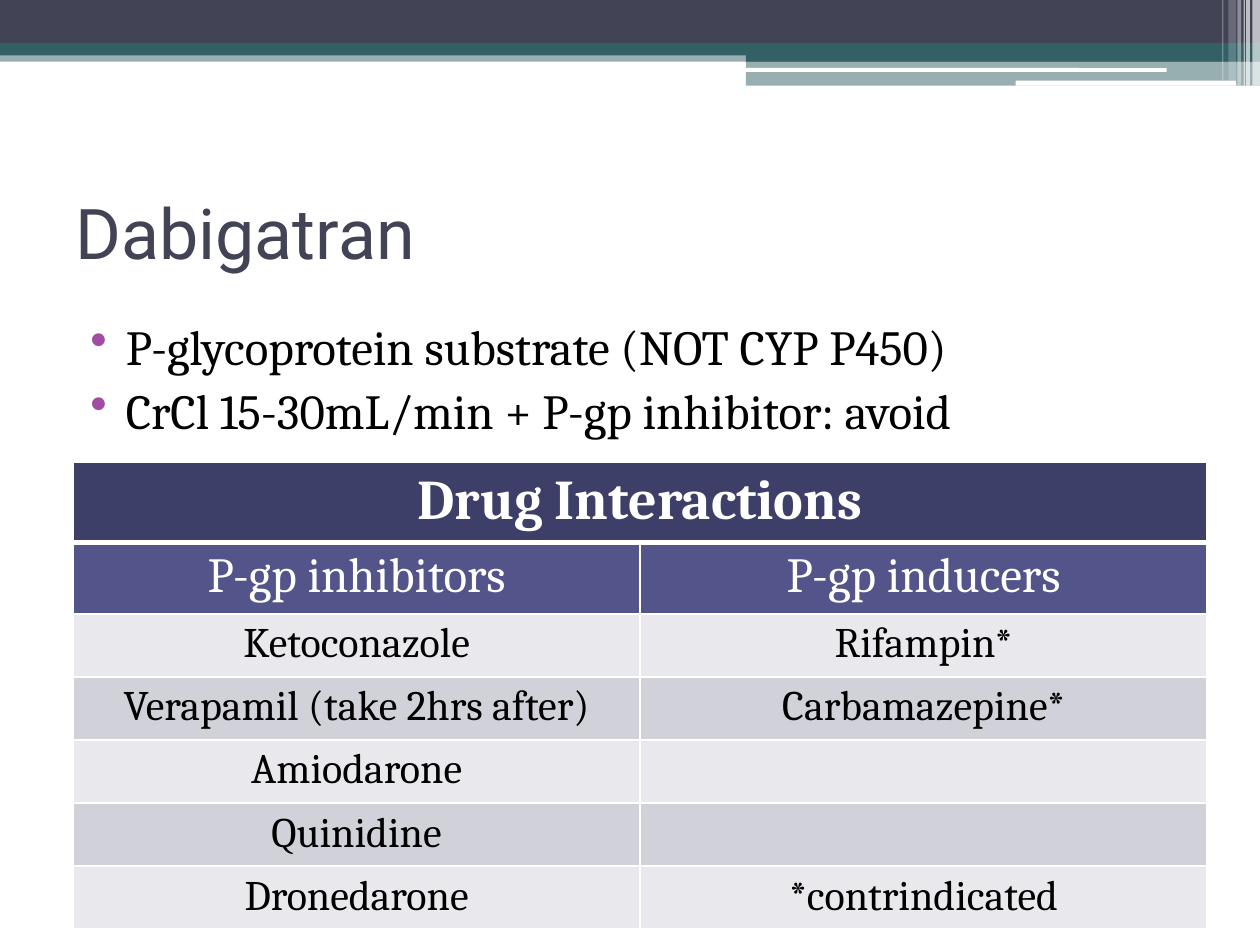
from lxml import etree
from pptx import Presentation
from pptx.dml.color import RGBColor
from pptx.enum import shapes, text
from pptx.oxml.ns import qn
from pptx.util import Inches, Pt

WHITE = RGBColor(0xFF, 0xFF, 0xFF)
BLACK = RGBColor(0, 0, 0)
SLATE = RGBColor(0x42, 0x44, 0x56)
TEAL = RGBColor(0x32, 0x60, 0x64)
PURPLE = RGBColor(0xA0, 0x4D, 0xA3)
NAVY = RGBColor(0x3E, 0x3F, 0x68)
INDIGO = RGBColor(0x53, 0x54, 0x8A)
LIGHT = RGBColor(0xE9, 0xE9, 0xED)
GREY = RGBColor(0xD1, 0xD1, 0xDA)

BANDS = [
    (0, 0.4, 10, 0.09, TEAL, 50),
    (0, 0, 10, 0.34, SLATE, 100),
    (0, 0.34, 10, 0.1, TEAL, 100),
    (5.92, 0.39, 4.08, 0.1, TEAL, 100),
    (5.92, 0.48, 4.08, 0.2, TEAL, 50),
]
HIGHLIGHTS = [(5.91, 0.54, 3.35, 0.03), (8.06, 0.64, 1.75, 0.04)]
STRIPES = [
    (9.94, 0.06, 0.68, 65),
    (9.89, 0.03, 0.68, 65),
    (9.87, 0.01, 0.68, 60),
    (9.82, 0.03, 0.68, 40),
    (9.75, 0.06, 0.64, 20),
    (9.7, 0.01, 0.64, 30),
]
BULLETS = [
    "P-glycoprotein substrate (NOT CYP P450)",
    "CrCl 15-30mL/min + P-gp inhibitor: avoid",
]
INTERACTIONS = [
    ("Drug Interactions", ""),
    ("P-gp inhibitors", "P-gp inducers"),
    ("Ketoconazole", "Rifampin*"),
    ("Verapamil (take 2hrs after)", "Carbamazepine*"),
    ("Amiodarone", ""),
    ("Quinidine", ""),
    ("Dronedarone", "*contrindicated"),
]


def add_bar(slide, left, top, width, height, color, opacity=100,
            kind=shapes.MSO_SHAPE.RECTANGLE):
    """Add a borderless bar with the given opacity in percent."""
    bar = slide.shapes.add_shape(
        kind, Inches(left), Inches(top), Inches(width), Inches(height))
    bar.shadow.inherit = False
    bar.line.fill.background()
    bar.fill.solid()
    bar.fill.fore_color.rgb = color
    if opacity < 100:
        color_element = bar.fill._xPr.find(qn("a:solidFill"))[0]
        etree.SubElement(color_element, qn("a:alpha"), val=str(opacity * 1000))


def format_text(paragraph, size, color, font="Cambria", bold=False):
    """Set the font of every run in a paragraph."""
    for run in paragraph.runs:
        run.font.name = font
        run.font.size = Pt(size)
        run.font.bold = bold
        run.font.color.rgb = color


def add_text_frame(slide, top, height, anchor):
    """Add a wrapping text box across the content width."""
    box = slide.shapes.add_textbox(
        Inches(0.5), Inches(top), Inches(9), Inches(height))
    box.text_frame.word_wrap = True
    box.text_frame.vertical_anchor = anchor
    return box.text_frame


def add_title(slide, title):
    """Add the slide title."""
    frame = add_text_frame(slide, 1.25, 1.17, text.MSO_ANCHOR.MIDDLE)
    frame.text = title
    format_text(frame.paragraphs[0], 40, SLATE, "Roboto")


def add_bullets(slide, lines):
    """Add the bulleted body text."""
    frame = add_text_frame(slide, 2.46, 4.73, text.MSO_ANCHOR.TOP)
    frame.text = "\n".join(lines)
    for paragraph in frame.paragraphs:
        paragraph.space_before = Pt(3)
        format_text(paragraph, 28, BLACK)
        properties = paragraph._p.get_or_add_pPr()
        properties.set("marL", str(Inches(0.4)))
        properties.set("indent", str(Inches(-0.28)))
        bullet_color = etree.SubElement(properties, qn("a:buClr"))
        etree.SubElement(bullet_color, qn("a:srgbClr"), val=str(PURPLE))
        etree.SubElement(properties, qn("a:buChar"), char="•")


def set_borders(cell, top=1, bottom=1):
    """Draw white borders around a cell, with widths in points."""
    properties = cell._tc.get_or_add_tcPr()
    widths = {"a:lnL": 1, "a:lnR": 1, "a:lnT": top, "a:lnB": bottom}
    for index, (tag, width) in enumerate(widths.items()):
        line = etree.Element(qn(tag), w=str(Pt(width)))
        fill = etree.SubElement(line, qn("a:solidFill"))
        etree.SubElement(fill, qn("a:srgbClr"), val=str(WHITE))
        properties.insert(index, line)


def row_style(index):
    """Return height, text size, text color and fill of a table row."""
    if index == 0:
        return 0.61, 32, WHITE, NAVY
    if index == 1:
        return 0.54, 28, WHITE, INDIGO
    return 0.48, 24, BLACK, GREY if index % 2 else LIGHT


def add_interactions(slide, rows):
    """Add the drug interaction table with a merged heading."""
    table = slide.shapes.add_table(
        len(rows), 2, Inches(0.58), Inches(3.67), Inches(9), Inches(3.55)).table
    for row_index, labels in enumerate(rows):
        height, size, color, fill = row_style(row_index)
        table.rows[row_index].height = Inches(height)
        for column_index, label in enumerate(labels):
            cell = table.cell(row_index, column_index)
            cell.text = label
            cell.fill.solid()
            cell.fill.fore_color.rgb = fill
            set_borders(cell, top=3 if row_index == 1 else 1,
                        bottom=3 if row_index == 0 else 1)
            paragraph = cell.text_frame.paragraphs[0]
            paragraph.alignment = text.PP_ALIGN.CENTER
            format_text(paragraph, size, color, bold=row_index == 0)
    table.cell(0, 0).merge(table.cell(0, 1))


def main():
    """Build and save the slide."""
    presentation = Presentation()
    presentation.slide_width = Inches(10)
    presentation.slide_height = Inches(7.5)
    slide = presentation.slides.add_slide(presentation.slide_layouts[6])
    for band in BANDS:
        add_bar(slide, *band)
    for highlight in HIGHLIGHTS:
        add_bar(slide, *highlight, WHITE,
                kind=shapes.MSO_SHAPE.ROUNDED_RECTANGLE)
    for left, width, height, opacity in STRIPES:
        add_bar(slide, left, 0, width, height, WHITE, opacity)
    add_title(slide, "Dabigatran")
    add_bullets(slide, BULLETS)
    add_interactions(slide, INTERACTIONS)
    presentation.save("out.pptx")


if __name__ == "__main__":
    main()
